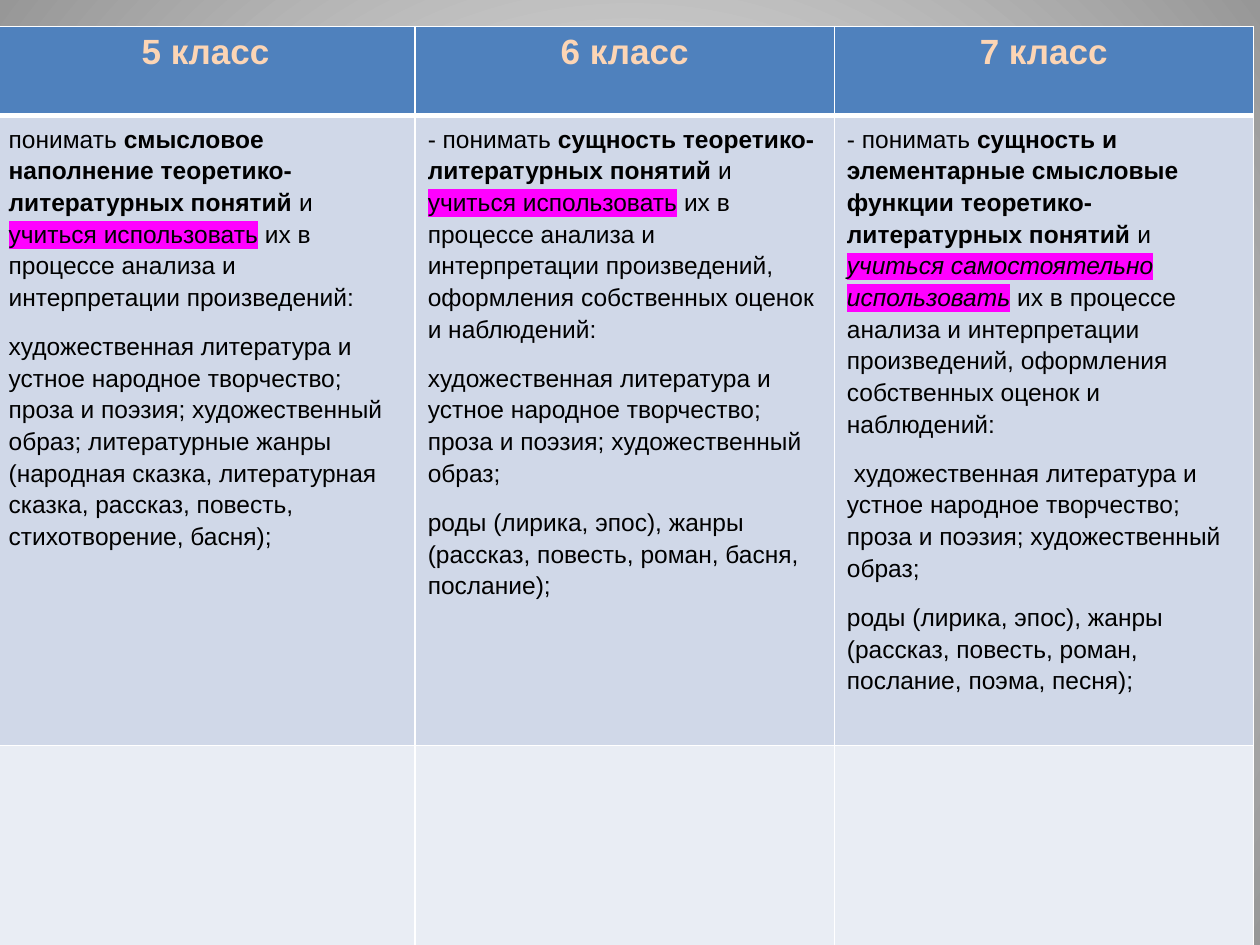
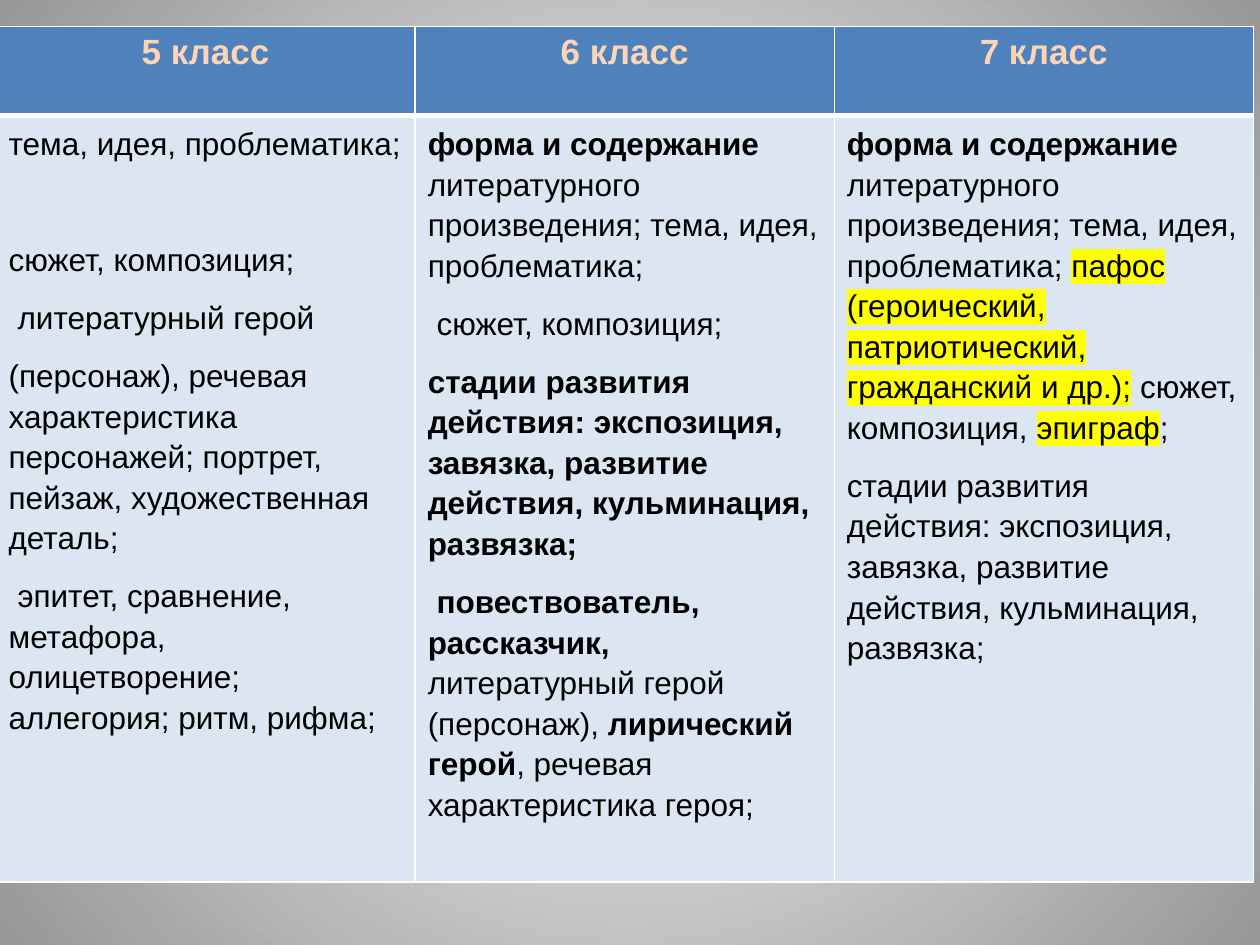
from lxml import etree
from pptx import Presentation
from pptx.dml.color import RGBColor
from pptx.enum.text import PP_ALIGN
from pptx.oxml.ns import qn
from pptx.util import Cm, Pt

CENTER = PP_ALIGN.CENTER

COLORS = {
    "glow": "FFFFFF", "edge": "979797", "line": "FFFFFF",
    "header": "4F81BD", "header_text": "FCD5B5", "text": "000000",
    "topics": "D0D8E8", "spare": "E9EDF4", "terms": "DCE6F2",
    "magenta": "FF00FF", "yellow": "FFFF00",
}

# Run formats; "highlight" names a colour
PLAIN = {"bold": False}
BOLD = {"bold": True}
SKILL = {"bold": False, "highlight": "magenta"}
SKILL_ALONE = {"bold": False, "italic": True, "highlight": "magenta"}
NEW_TERM = {"bold": False, "highlight": "yellow"}

GRADES = ["5 класс", "6 класс", "7 класс"]
COLUMN_WIDTH = Cm(8.45)
HEADER_HEIGHT = 1.8
THIN, THICK = Pt(1), Pt(3)

# Wording shared by several cells
ANALYSIS = " их в процессе анализа и интерпретации произведений"
REVIEWS = ANALYSIS + ", оформления собственных оценок и наблюдений:"
LITERATURE = ("художественная литература и устное народное творчество; "
              "проза и поэзия; художественный образ;")
STAGES = ("стадии развития действия: экспозиция, завязка, развитие действия, "
          "кульминация, развязка;")
FORM = ("форма и содержание", BOLD)
THEMES = " литературного произведения; тема, идея, проблематика;"

# Each cell is a list of paragraphs; indent is the first-line indent in cm
CONCEPTS = [
    [
        {"runs": [("понимать ", PLAIN),
                  ("смысловое наполнение теоретико-литературных понятий", BOLD),
                  (" и ", PLAIN), ("учиться использовать", SKILL),
                  (ANALYSIS + ":", PLAIN)]},
        {"runs": [(LITERATURE + " литературные жанры (народная сказка, "
                   "литературная сказка, рассказ, повесть, стихотворение, басня);",
                   PLAIN)]},
    ],
    [
        {"runs": [("- понимать ", PLAIN),
                  ("сущность теоретико-литературных понятий", BOLD),
                  (" и ", PLAIN), ("учиться использовать", SKILL),
                  (REVIEWS, PLAIN)]},
        {"runs": [(LITERATURE, PLAIN)]},
        {"runs": [("роды (лирика, эпос), жанры (рассказ, повесть, роман, "
                   "басня, послание);", PLAIN)]},
    ],
    [
        {"runs": [("- понимать ", PLAIN),
                  ("сущность и элементарные смысловые функции "
                   "теоретико-литературных понятий", BOLD),
                  (" и ", PLAIN),
                  ("учиться самостоятельно использовать", SKILL_ALONE),
                  (REVIEWS, PLAIN)]},
        {"runs": [(LITERATURE, PLAIN)], "indent": 0.14},
        {"runs": [("роды (лирика, эпос), жанры (рассказ, повесть, роман, "
                   "послание, поэма, песня);", PLAIN)]},
    ],
]

TERMS = [
    [
        {"runs": [("тема, идея, проблематика;", PLAIN)], "after": 43},
        {"runs": [("сюжет, композиция;", PLAIN)]},
        {"runs": [("литературный герой", PLAIN)], "indent": 0.18},
        {"runs": [("(персонаж), речевая характеристика персонажей; портрет, "
                   "пейзаж, художественная деталь;", PLAIN)]},
        {"runs": [("эпитет, сравнение, метафора, олицетворение; аллегория; "
                   "ритм, рифма;", PLAIN)], "indent": 0.18},
    ],
    [
        {"runs": [FORM, (THEMES, PLAIN)]},
        {"runs": [("сюжет, композиция;", PLAIN)], "indent": 0.18},
        {"runs": [(STAGES, BOLD)]},
        {"runs": [("повествователь, рассказчик,", BOLD),
                  (" литературный герой (персонаж), ", PLAIN),
                  ("лирический герой", BOLD),
                  (", речевая характеристика героя;", PLAIN)], "indent": 0.18},
    ],
    [
        {"runs": [FORM, (THEMES + " ", PLAIN),
                  ("пафос (героический, патриотический, гражданский и др.);",
                   NEW_TERM),
                  (" сюжет, композиция, ", PLAIN), ("эпиграф", NEW_TERM),
                  (";", PLAIN)]},
        {"runs": [(STAGES, PLAIN)]},
    ],
]

# Rows below the header: height in cm, fill, cells
SLIDES = [
    {"size": 14, "rows": [(12.7, "topics", CONCEPTS), (5.89, "spare", [[], [], []])]},
    {"size": 18, "rows": [(15.45, "terms", TERMS)]},
]


def style_cell(cell, fill, top, bottom):
    """Fill a cell and draw its four borders."""
    cell.fill.solid()
    cell.fill.fore_color.rgb = RGBColor.from_string(COLORS[fill])
    borders = [("a:lnL", THIN), ("a:lnR", THIN), ("a:lnT", top), ("a:lnB", bottom)]
    for position, (side, width) in enumerate(borders):
        border = etree.Element(qn(side), w=str(width))
        paint = etree.SubElement(border, qn("a:solidFill"))
        etree.SubElement(paint, qn("a:srgbClr"), val=COLORS["line"])
        cell._tc.tcPr.insert(position, border)


def add_run(paragraph, text, color, formats):
    """Append a run whose font follows the format values."""
    run = paragraph.add_run()
    run.text = text
    run.font.name = "Arial"
    run.font.color.rgb = RGBColor.from_string(COLORS[color])
    for attribute, value in formats.items():
        if attribute != "highlight":
            setattr(run.font, attribute, value)
    if "highlight" in formats:
        marker = etree.Element(qn("a:highlight"))
        etree.SubElement(marker, qn("a:srgbClr"), val=COLORS[formats["highlight"]])
        run._r.rPr.find(qn("a:solidFill")).addnext(marker)


prs = Presentation()
prs.slide_width, prs.slide_height = Cm(25.4), Cm(19.05)

# Round grey gradient shared by all slides
backdrop = prs.slide_master.background.fill
backdrop.gradient()
for stop, shade in zip(backdrop.gradient_stops, ("glow", "edge")):
    stop.color.rgb = RGBColor.from_string(COLORS[shade])
linear = prs.slide_master.element.find(".//" + qn("p:bgPr")).find(".//" + qn("a:lin"))
circle = etree.Element(qn("a:path"), {"path": "circle"})
etree.SubElement(circle, qn("a:fillToRect"), dict.fromkeys("ltrb", "50000"))
linear.getparent().replace(linear, circle)

for content in SLIDES:
    slide = prs.slides.add_slide(prs.slide_layouts[6])
    heights = [HEADER_HEIGHT] + [row[0] for row in content["rows"]]
    grades = slide.shapes.add_table(
        len(heights), len(GRADES), Cm(-0.08), Cm(0.53),
        COLUMN_WIDTH * len(GRADES), Cm(sum(heights))).table
    grades.horz_banding = False
    for column in grades.columns:
        column.width = COLUMN_WIDTH
    for row, height in zip(grades.rows, heights):
        row.height = Cm(height)

    # Header row
    for column, grade in enumerate(GRADES):
        cell = grades.cell(0, column)
        style_cell(cell, "header", THIN, THICK)
        heading = cell.text_frame.paragraphs[0]
        heading.alignment = CENTER
        add_run(heading, grade, "header_text", {"size": Pt(20), "bold": True})

    # Requirements for each grade
    for number, (height, fill, cells) in enumerate(content["rows"], start=1):
        for column, requirements in enumerate(cells):
            cell = grades.cell(number, column)
            style_cell(cell, fill, THICK if number == 1 else THIN, THIN)
            frame = cell.text_frame
            for index, requirement in enumerate(requirements):
                paragraph = frame.add_paragraph() if index else frame.paragraphs[0]
                spacing = {"line_spacing": 1.15,
                           "space_after": Pt(requirement.get("after", 10))}
                for attribute, value in spacing.items():
                    setattr(paragraph, attribute, value)
                if "indent" in requirement:
                    paragraph._p.get_or_add_pPr().set(
                        "indent", str(Cm(requirement["indent"])))
                for text, formats in requirement["runs"]:
                    add_run(paragraph, text, "text",
                            {"size": Pt(content["size"]), **formats})

prs.save("out.pptx")
